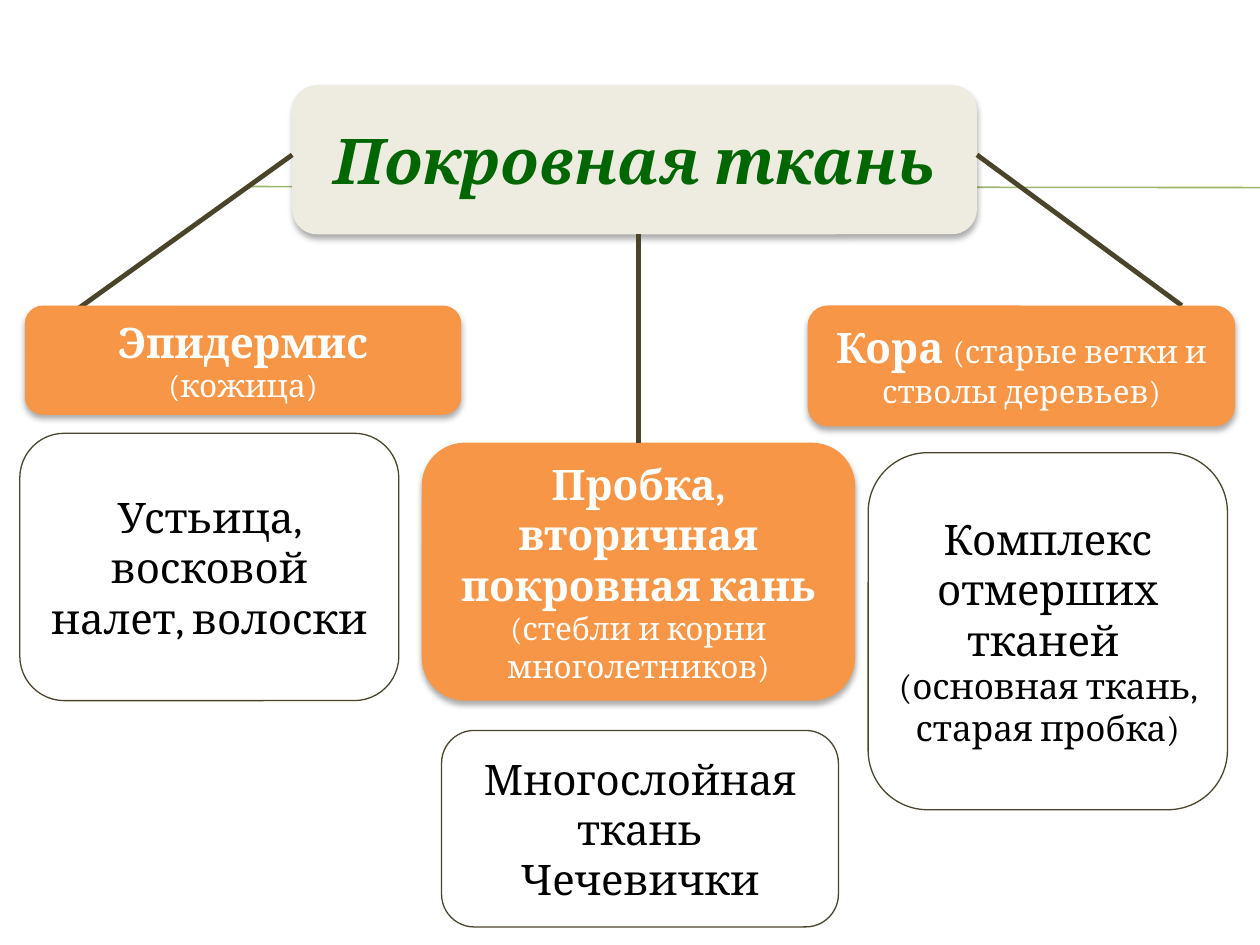
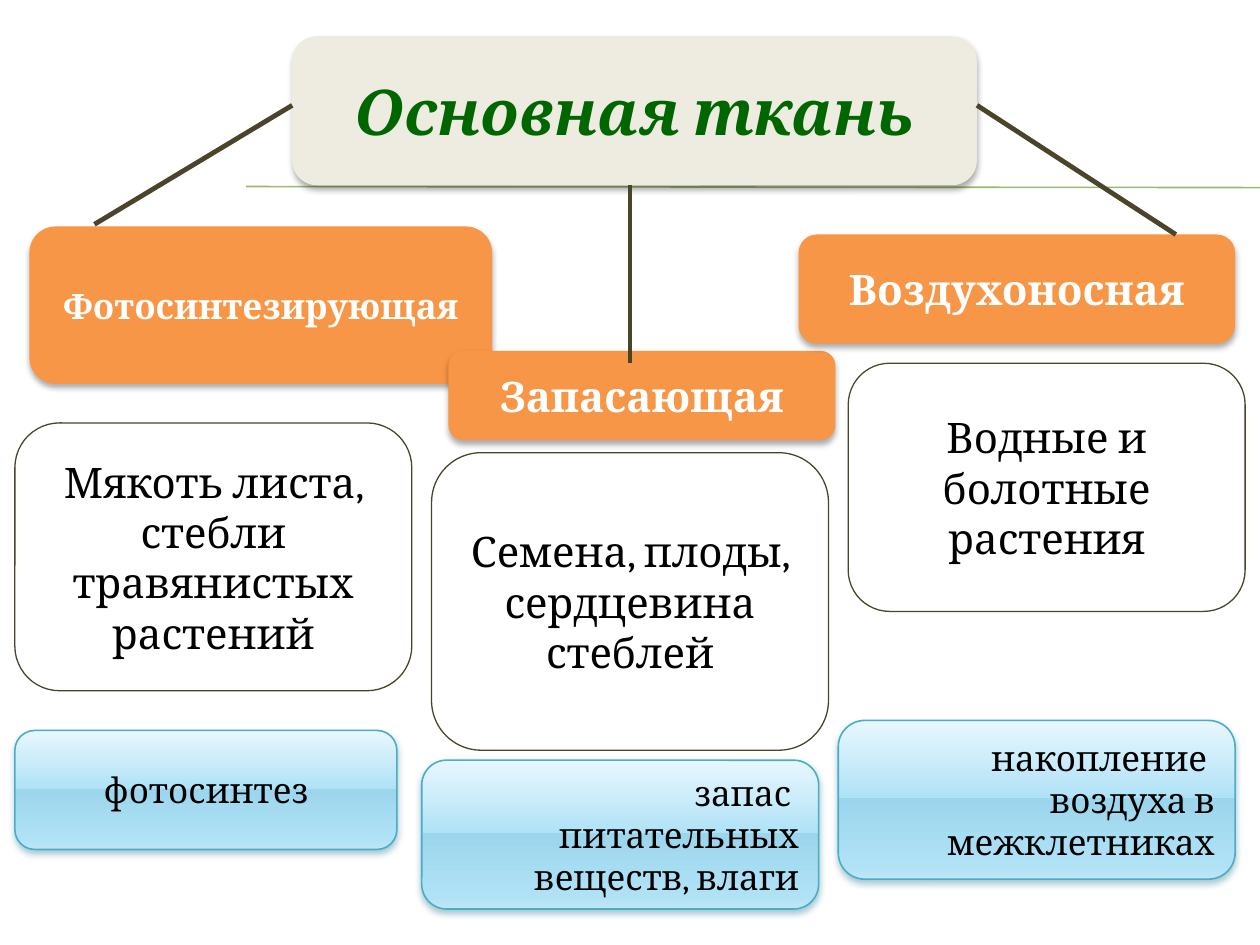
from pptx import Presentation
from pptx.dml.color import RGBColor as RGB
from pptx.enum.shapes import MSO_CONNECTOR as LINK, MSO_SHAPE as FORM
from pptx.enum.text import MSO_ANCHOR as ANCHOR, PP_ALIGN as ALIGN
from pptx.oxml import parse_xml
from pptx.oxml.ns import qn
from pptx.util import Pt
from lxml import etree

FONT = "Cambria"
NS = 'xmlns:a="http://schemas.openxmlformats.org/drawingml/2006/main"'
HUES = {
    "white": "FFFFFF", "black": "000000", "cream": "EEECE1", "green": "006600",
    "rule": "9CB86E", "brown": "4A452A", "orange": "F79646",
    "teal": "4BACC6", "deep": "1A7088",
}
GLOSS = [(0, "E8F7FE"), (49, "B0E2F6"), (49, "9CD6EC"), (92, "B0E2F6"), (100, "BEE6F6")]
SOFT = ("black", 32, 3.5, 2.2)
KINDS = {
    "title": {"fill": "cream", "text": "green", "line": None, "shade": SOFT},
    "head": {"fill": "orange", "text": "white", "line": None, "shade": SOFT},
    "note": {"fill": "white", "text": "black", "line": ("brown", 0.75), "shade": None},
    "role": {"fill": None, "text": "black", "line": ("teal", 0.9),
             "shade": ("deep", 38, 4, 2)},
}


def add_box(slide, kind, place, paras, align=ALIGN.CENTER):
    look = KINDS[kind]
    box = slide.shapes.add_shape(FORM.ROUNDED_RECTANGLE, *map(Pt, place))
    box.shadow.inherit = False
    if look["fill"]:
        box.fill.solid()
        box.fill.fore_color.rgb = RGB.from_string(HUES[look["fill"]])
    else:
        box.fill.gradient()
        box.fill.gradient_angle = 270
        stops = box._element.spPr.find(qn("a:gradFill")).find(qn("a:gsLst"))
        for stop in list(stops):
            stops.remove(stop)
        for spot, hue in GLOSS:
            stops.append(parse_xml(
                f'<a:gs {NS} pos="{spot * 1000}"><a:srgbClr val="{hue}"/></a:gs>'))
    if look["line"]:
        hue, width = look["line"]
        box.line.color.rgb = RGB.from_string(HUES[hue])
        box.line.width = Pt(width)
    else:
        box.line.fill.background()
    if look["shade"]:
        hue, alpha, blur, dist = look["shade"]
        box._element.spPr.find(qn("a:effectLst")).append(parse_xml(
            f'<a:outerShdw {NS} blurRad="{Pt(blur)}" dist="{Pt(dist)}" dir="5400000" '
            f'rotWithShape="0"><a:srgbClr val="{HUES[hue]}">'
            f'<a:alpha val="{alpha * 1000}"/></a:srgbClr></a:outerShdw>'))
    frame = box.text_frame
    frame.word_wrap = True
    frame.vertical_anchor = ANCHOR.MIDDLE
    for num, runs in enumerate(paras):
        para = frame.add_paragraph() if num else frame.paragraphs[0]
        para.alignment = align
        for words, size, bold in runs:
            run = para.add_run()
            run.text = words
            run.font.name = FONT
            run.font.size = Pt(size)
            run.font.bold = bold
            run.font.italic = kind == "title"
            run.font.color.rgb = RGB.from_string(HUES[look["text"]])
    return box


def add_line(slide, ends, hue="brown", width=2.75):
    line = slide.shapes.add_connector(LINK.STRAIGHT, *map(Pt, ends))
    line.line.color.rgb = RGB.from_string(HUES[hue])
    line.line.width = Pt(width)
    etree.SubElement(line._element.spPr, qn("a:effectLst"))
    return line


deck = Presentation()
deck.slide_width, deck.slide_height = Pt(720), Pt(540)

pages = []
for name, top in [("Покровная ткань", 48.7), ("Основная ткань", 20.7)]:
    page = deck.slides.add_slide(deck.slide_layouts[6])
    add_line(page, (140.6, 106.6, 720, 107.2), "rule", 0.9)
    add_box(page, "title", (167, top, 391.2, 85.2), [[(name, 36, True)]])
    pages.append(page)
cover, ground = pages

add_line(cover, (167, 88.5, 39.6, 180))
add_line(cover, (675.3, 174.6, 558.3, 88.5))
add_box(cover, "note", (11.3, 247.6, 216.6, 152.8),
        [[("Устьица, восковой налет, волоски", 24, False)]])
add_box(cover, "note", (496.1, 258.7, 205.3, 204),
        [[("Комплекс отмерших тканей ", 24, False)],
         [("(основная ткань, старая пробка)", 20, False)]])
add_box(cover, "note", (252.3, 417.4, 226.8, 112.3),
        [[("Многослойная ткань", 24, False)], [("Чечевички", 24, False)]])
add_box(cover, "head", (14.2, 174.6, 249.4, 62.4),
        [[("Эпидермис ", 24, True), ("(кожица)", 18, False)]])
add_box(cover, "head", (461.5, 174.6, 244.3, 69),
        [[("Кора ", 24, True), ("(старые ветки и стволы деревьев)", 18, False)]])
cork = add_box(cover, "head", (241, 253, 247.6, 147.4),
               [[("Пробка, вторичная покровная кань", 24, True)],
                [("(стебли и корни многолетников)", 18, False)]])
stem = add_line(cover, (364.8, 253, 364.8, 133.9))
stem.begin_connect(cork, 0)

for place, words in [
    ((484.7, 207.6, 226.8, 141.8), "Водные и болотные растения"),
    ((246.6, 258.7, 226.8, 170), "Семена, плоды, сердцевина стеблей"),
    ((8.5, 241.7, 226.8, 153), "Мякоть листа, стебли травянистых растений"),
]:
    add_box(ground, "note", place, [[(words, 24, False)]])
for place, words, size in [
    ((16.8, 129.4, 264.4, 89.9), "Фотосинтезирующая", 20),
    ((256.3, 200.5, 221.1, 51), "Запасающая", 24),
    ((456.4, 134, 249.4, 62.4), "Воздухоносная", 24),
]:
    add_box(ground, "head", place, [[(words, size, True)]])
for ends in [(167, 60.2, 54, 128.2), (671.9, 134, 558.3, 60.2), (360, 207.4, 360, 105.9)]:
    add_line(ground, ends)
for place, lines, align in [
    ((8.5, 417.4, 218.3, 68), ["фотосинтез"], ALIGN.CENTER),
    ((479, 411.7, 226.8, 90.7), ["накопление ", "воздуха в межклетниках"], ALIGN.RIGHT),
    ((241, 434.4, 226.8, 85), ["запас ", "питательных веществ, влаги"], ALIGN.RIGHT),
]:
    add_box(ground, "role", place, [[(words, 20, False)] for words in lines], align)

deck.save("out.pptx")
